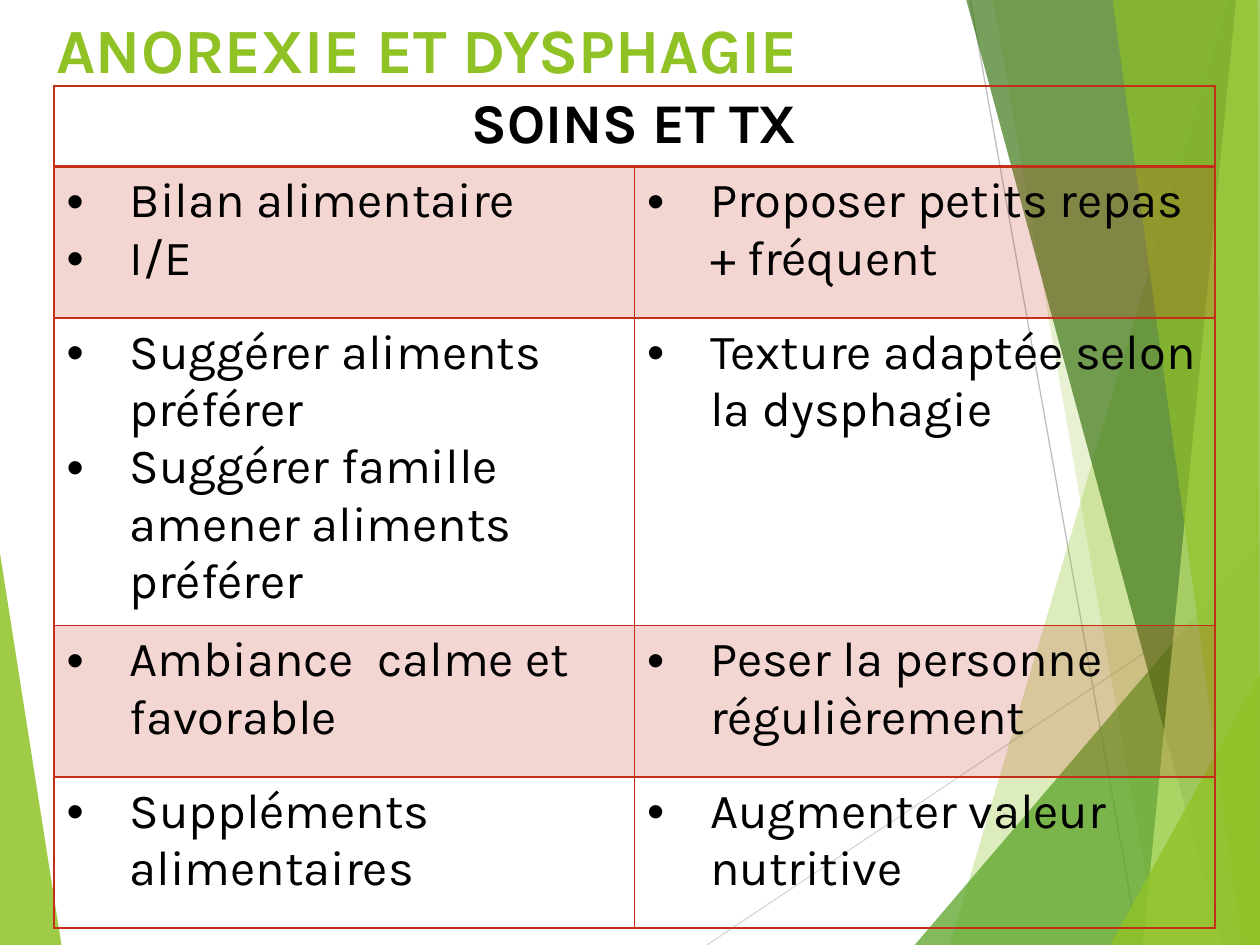
import pptx
import pptx.util
import pptx.dml.color
import pptx.enum.shapes
import pptx.enum.text
import pptx.oxml
import pptx.oxml.ns
import lxml.etree

Cm = pptx.util.Cm
Pt = pptx.util.Pt
RGB = pptx.dml.color.RGBColor.from_string
qn = pptx.oxml.ns.qn
SubElement = lxml.etree.SubElement

COLORS = {
    "lime": "90C226", "green": "54A021", "forest": "3F7819", "pale": "C0E474",
    "light_gray": "D9D9D9", "gray": "BFBFBF", "red": "C42F1A", "black": "000000",
}
FONT = "Karla"


def set_fill(fill, color, alpha):
    fill.solid()
    fill.fore_color.rgb = RGB(COLORS[color])
    clr = fill._xPr.find(qn("a:solidFill"))[0]
    SubElement(clr, qn("a:alpha"), val=str(alpha * 1000))


def format_runs(p, size, color, bold):
    for r in p.runs:
        r.font.name = FONT
        r.font.size = Pt(size)
        r.font.bold = bold
        r.font.color.rgb = RGB(COLORS[color])


prs = pptx.Presentation()
prs.slide_width = Cm(25.4)
prs.slide_height = Cm(19.05)
s = prs.slides.add_slide(prs.slide_layouts[6])

rays = [
    ("lime", 85, [(0, 11.15), (1.24, 19.05), (0, 19.05)]),
    ("lime", 30, [(24.77, 0), (19.15, 19.05), (25.4, 19.05), (25.4, 0)]),
    ("lime", 20, [(20.02, 0), (23.34, 19.05), (25.4, 19.05), (25.4, 0)]),
    ("green", 72, [(18.44, 19.05), (25.4, 10.9), (25.4, 19.05)]),
    ("forest", 70, [(19.48, 0), (24.64, 19.05), (25.4, 19.05), (25.4, 0)]),
    ("pale", 70, [(24.92, 0), (23.04, 19.05), (25.4, 19.05), (25.4, 0)]),
    ("lime", 65, [(22.43, 0), (25.04, 19.05), (25.4, 19.05), (25.35, 0)]),
    ("lime", 80, [(22.38, 19.05), (25.4, 13.59), (25.4, 19.05)]),
]
lines = [
    ("light_gray", (14.25, 19.05, 25.4, 11.61)),
    ("gray", (19.56, 0, 22.96, 19.05)),
]

for i, (color, alpha, points) in enumerate(rays):
    points = [(Cm(x), Cm(y)) for x, y in points]
    fb = s.shapes.build_freeform(*points[0])
    fb.add_line_segments(points[1:], close=True)
    sp = fb.convert_to_shape()
    sp.shadow.inherit = False
    sp.line.fill.background()
    set_fill(sp.fill, color, alpha)
    if i == 0:
        for line_color, ends in lines:
            cx = s.shapes.add_connector(
                pptx.enum.shapes.MSO_CONNECTOR.STRAIGHT, *[Cm(v) for v in ends])
            cx.line.color.rgb = RGB(COLORS[line_color])
            cx.line.width = Pt(0.75)
            SubElement(cx._element.spPr, qn("a:effectLst"))

title = s.shapes.add_textbox(Cm(0.89), 0, Cm(16.41), Cm(2.13))
tf = title.text_frame
tf.word_wrap = True
tf.vertical_anchor = pptx.enum.text.MSO_ANCHOR.MIDDLE
p = tf.paragraphs[0]
p.text = "ANOREXIE ET DYSPHAGIE"
p.line_spacing = 0.9
format_runs(p, 36, "lime", True)

rows = [
    (1.63, ["SOINS ET TX", ""]),
    (3.05, ["Bilan alimentaire\nI/E", "Proposer petits repas + fréquent"]),
    (6.2, ["Suggérer aliments préférer\nSuggérer famille amener aliments préférer",
           "Texture adaptée selon la dysphagie"]),
    (3.05, ["Ambiance  calme et favorable", "Peser la personne régulièrement"]),
    (3.05, ["Suppléments alimentaires", "Augmenter valeur nutritive"]),
]
table = s.shapes.add_table(len(rows), 2, Cm(1.09), Cm(1.73), Cm(23.4), Cm(16.98)).table
table.first_row = False
table.horz_banding = False
for col in table.columns:
    col.width = Cm(11.7)
table.cell(0, 0).merge(table.cell(0, 1))

for i, (height, texts) in enumerate(rows):
    table.rows[i].height = Cm(height)
    for j, text in enumerate(texts):
        cell = table.cell(i, j)
        if text:
            cell.text_frame.text = text
        for p in cell.text_frame.paragraphs:
            if i == 0:
                p.alignment = pptx.enum.text.PP_ALIGN.CENTER
                format_runs(p, 32, "black", True)
            else:
                format_runs(p, 28, "black", False)
                pPr = p._p.get_or_add_pPr()
                pPr.set("marL", str(Cm(1.27)))
                pPr.set("indent", str(-Cm(1.27)))
                SubElement(pPr, qn("a:buFont"), typeface="Arial")
                SubElement(pPr, qn("a:buChar"), char="•")
        if i % 2:
            set_fill(cell.fill, "red", 20)
        else:
            cell.fill.background()
        tcPr = cell._tc.get_or_add_tcPr()
        for k, side in enumerate(["lnL", "lnR", "lnT", "lnB"]):
            thick = (i, side) in [(0, "lnB"), (1, "lnT")]
            ln = lxml.etree.Element(qn("a:" + side), w=str(Pt(2 if thick else 1)))
            solid = SubElement(ln, qn("a:solidFill"))
            SubElement(solid, qn("a:srgbClr"), val=COLORS["red"])
            tcPr.insert(k, ln)

prs.save("out.pptx")
